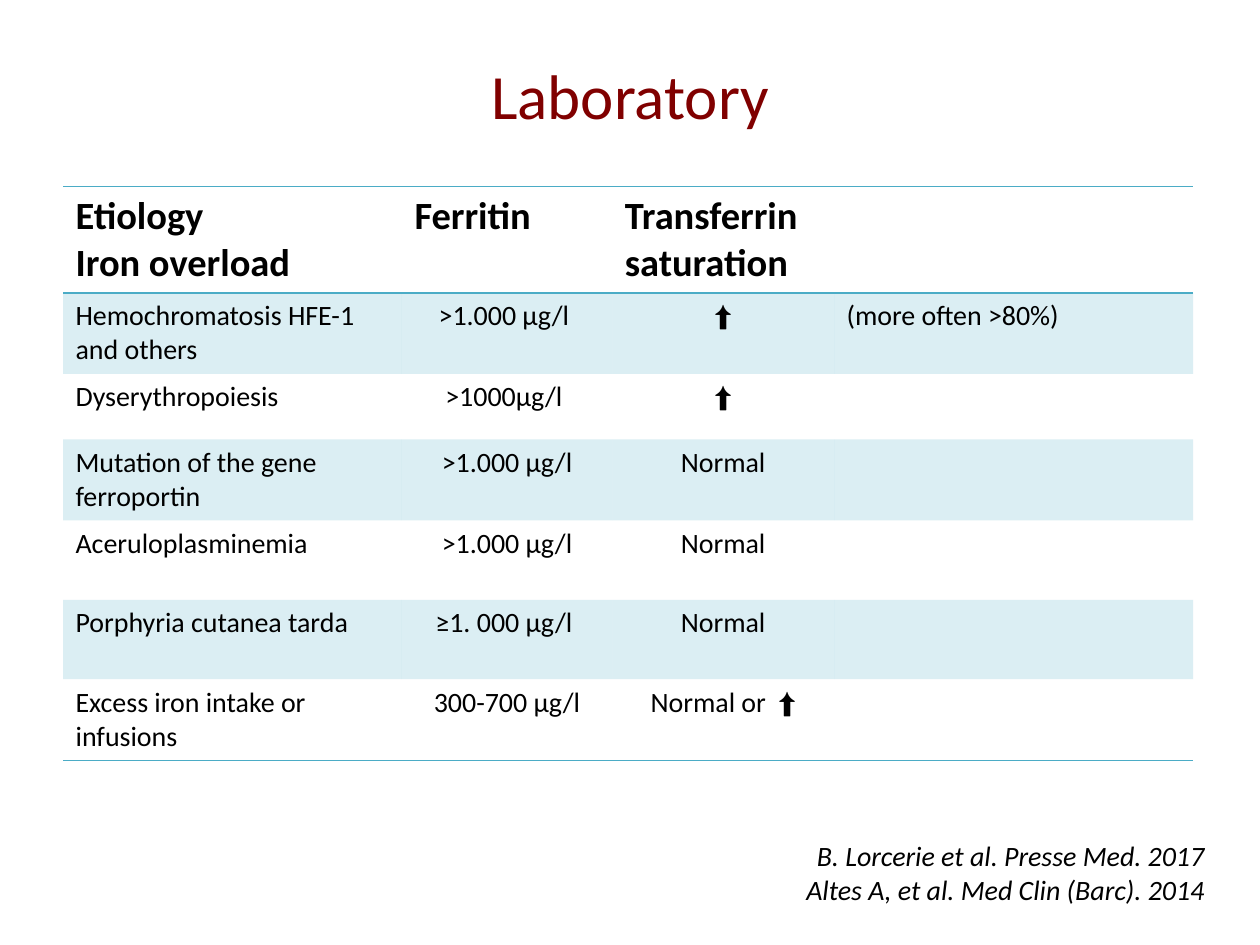
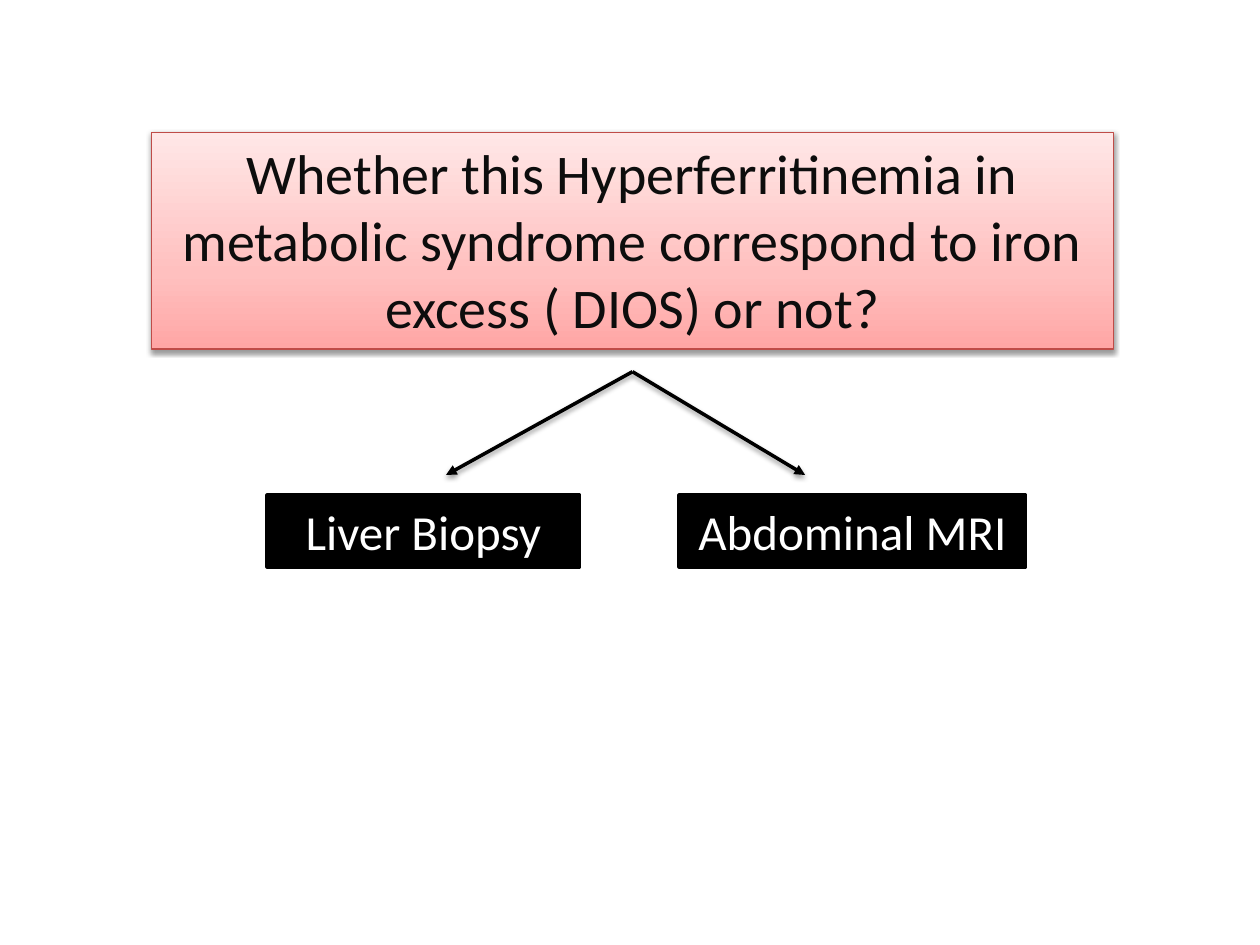
from copy import deepcopy
from dataclasses import dataclass

from lxml.etree import SubElement
from pptx import Presentation
from pptx.dml.color import RGBColor
from pptx.enum.shapes import MSO_CONNECTOR, MSO_SHAPE
from pptx.enum.text import MSO_ANCHOR, PP_ALIGN
from pptx.oxml import parse_xml
from pptx.oxml.ns import nsdecls, qn
from pptx.presentation import Presentation as Deck
from pptx.shapes.autoshape import Shape
from pptx.slide import Slide
from pptx.text.text import TextFrame
from pptx.util import Inches, Pt


@dataclass(frozen=True)
class Theme:
    font: str = "Calibri"
    black: str = "000000"
    white: str = "FFFFFF"
    title: str = "800000"
    accent: str = "4BACC6"
    question_text: str = "0D0D0D"
    question_line: str = "BF4C48"
    question_stops: tuple[tuple[float, str], ...] = ((0, "FFA6A5"), (0.35, "FFC0BF"), (1, "FFE7E7"))
    title_size: int = 36
    question_size: int = 32
    box_size: int = 28
    header_size: int = 22
    body_size: int = 16


@dataclass(frozen=True)
class Area:
    left: float
    top: float
    width: float
    height: float

    def lengths(self) -> tuple[int, int, int, int]:
        return Inches(self.left), Inches(self.top), Inches(self.width), Inches(self.height)


@dataclass(frozen=True)
class TextStyle:
    size: int
    color: str
    align: PP_ALIGN = PP_ALIGN.LEFT
    bold: bool = False
    italic: bool = False


@dataclass(frozen=True)
class ExamBox:
    text: str
    area: Area
    arrow_end: float


THEME = Theme()
NO_TABLE_STYLE = "{2D5ABB26-0587-4C30-8999-92F81FD0307C}"
COLUMN_WIDTHS = (2.69, 1.67, 1.76, 2.85)
ROW_HEIGHTS = (0.83, 0.63, 0.52, 0.63, 0.63, 0.63, 0.63)
LAB_ROWS = (
    ("Etiology\nIron overload", "Ferritin", "Transferrin saturation", ""),
    ("Hemochromatosis HFE-1 and others", ">1.000 μg/l ", "⬆", "(more often >80%)"),
    ("Dyserythropoiesis", ">1000μg/l ", "⬆", ""),
    ("Mutation of the gene ferroportin", ">1.000 μg/l", "Normal", ""),
    ("Aceruloplasminemia", ">1.000 μg/l", "Normal", ""),
    ("Porphyria cutanea tarda", "≥1. 000 μg/l ", "Normal", ""),
    ("Excess iron intake or infusions", " 300-700 μg/l ", "Normal or  ⬆", ""),
)
QUESTION = Area(1.2, 1.05, 7.64, 1.72)
EXAMS = (
    ExamBox("Liver Biopsy", Area(2.12, 3.93, 2.48, 0.57), 3.54),
    ExamBox("Abdominal MRI", Area(5.39, 3.93, 2.75, 0.57), 6.39),
)
ARROW_TOP, ARROW_BOTTOM = 2.95, 3.77


def rgb(color: str) -> RGBColor:
    return RGBColor.from_string(color)


def write(tf: TextFrame, text: str, style: TextStyle) -> None:
    tf.text = text
    for p in tf.paragraphs:
        p.alignment = style.align
        p.font.size = Pt(style.size)
        for r in p.runs:
            r.font.name = THEME.font
            r.font.size = Pt(style.size)
            r.font.bold = style.bold
            r.font.italic = style.italic
            r.font.color.rgb = rgb(style.color)


def add_label(s: Slide, area: Area, text: str, style: TextStyle) -> None:
    tf = s.shapes.add_textbox(*area.lengths()).text_frame
    tf.word_wrap = False
    write(tf, text, style)


def add_box(s: Slide, area: Area, text: str, style: TextStyle, line: str, line_width: float) -> Shape:
    sp = s.shapes.add_shape(MSO_SHAPE.RECTANGLE, *area.lengths())
    sp.shadow.inherit = False
    sp.fill.solid()
    sp.fill.fore_color.rgb = rgb(THEME.black)
    sp.line.color.rgb = rgb(line)
    sp.line.width = Pt(line_width)
    tf = sp.text_frame
    tf.word_wrap = True
    tf.vertical_anchor = MSO_ANCHOR.TOP
    write(tf, text, style)
    return sp


def add_shadow(effects) -> None:
    effects.append(parse_xml(
        f'<a:outerShdw {nsdecls("a")} blurRad="{Pt(3.1)}" dist="{Pt(1.6)}" dir="5400000" rotWithShape="0">'
        f'<a:srgbClr val="{THEME.black}"><a:alpha val="38000"/></a:srgbClr></a:outerShdw>'
    ))


def add_gradient(sp: Shape) -> None:
    sp.fill.gradient()
    sp.fill.gradient_angle = 90
    stop_list = sp._element.find(".//" + qn("a:gsLst"))
    stop_list.append(deepcopy(stop_list[-1]))
    for stop, (position, color) in zip(sp.fill.gradient_stops, THEME.question_stops):
        stop.position = position
        stop.color.rgb = rgb(color)


def add_arrow(s: Slide, start: tuple[float, float], end: tuple[float, float]) -> None:
    points = [Inches(v) for v in (*start, *end)]
    arrow = s.shapes.add_connector(MSO_CONNECTOR.STRAIGHT, *points)
    arrow.line.color.rgb = rgb(THEME.black)
    arrow.line.width = Pt(2)
    sp_pr = arrow._element.spPr
    SubElement(sp_pr.find(qn("a:ln")), qn("a:tailEnd"), type="triangle")
    add_shadow(SubElement(sp_pr, qn("a:effectLst")))


def style_cell(cell, row: int) -> None:
    tc_pr = cell._tc.get_or_add_tcPr()
    if row % 2:
        cell.fill.solid()
        cell.fill.fore_color.rgb = rgb(THEME.accent)
        SubElement(tc_pr.find(".//" + qn("a:srgbClr")), qn("a:alpha"), val="20000")
    else:
        cell.fill.background()
    edges = {0: ("lnT", "lnB"), len(LAB_ROWS) - 1: ("lnB",)}.get(row, ())
    for i, edge in enumerate(edges):
        tc_pr.insert(i, parse_xml(
            f'<a:{edge} {nsdecls("a")} w="{Pt(1)}"><a:solidFill>'
            f'<a:srgbClr val="{THEME.accent}"/></a:solidFill></a:{edge}>'
        ))


def add_lab_table(s: Slide) -> None:
    area = Area(0.5, 1.48, sum(COLUMN_WIDTHS), sum(ROW_HEIGHTS))
    table = s.shapes.add_table(len(LAB_ROWS), len(COLUMN_WIDTHS), *area.lengths()).table
    table.first_row = table.horz_banding = False
    table._tbl.tblPr.find(qn("a:tableStyleId")).text = NO_TABLE_STYLE
    for column, width in zip(table.columns, COLUMN_WIDTHS):
        column.width = Inches(width)
    for i, (row, height) in enumerate(zip(table.rows, ROW_HEIGHTS)):
        row.height = Inches(height)
        for j, (cell, text) in enumerate(zip(row.cells, LAB_ROWS[i])):
            align = PP_ALIGN.CENTER if i and j in (1, 2) else PP_ALIGN.LEFT
            size = THEME.body_size if i else THEME.header_size
            write(cell.text_frame, text, TextStyle(size, THEME.black, align, bold=i == 0))
            style_cell(cell, i)


def build_laboratory(prs: Deck) -> None:
    s = prs.slides.add_slide(prs.slide_layouts[6])
    add_lab_table(s)
    add_label(s, Area(6.26, 6.61, 3.4, 0.64),
              "B. Lorcerie et al. Presse Med. 2017\nAltes A, et al. Med Clin (Barc). 2014",
              TextStyle(THEME.body_size, THEME.black, PP_ALIGN.RIGHT, italic=True))
    add_label(s, Area(3.8, 0.4, 2.45, 0.71), "Laboratory", TextStyle(THEME.title_size, THEME.title))


def build_question(prs: Deck) -> None:
    s = prs.slides.add_slide(prs.slide_layouts[6])
    sp = add_box(s, QUESTION,
                 "Whether this Hyperferritinemia in metabolic syndrome correspond to iron excess ( DIOS) or not?",
                 TextStyle(THEME.question_size, THEME.question_text, PP_ALIGN.CENTER),
                 THEME.question_line, 0.75)
    add_gradient(sp)
    add_shadow(sp._element.spPr.find(qn("a:effectLst")))
    center = QUESTION.left + QUESTION.width / 2
    exam_style = TextStyle(THEME.box_size, THEME.white, PP_ALIGN.CENTER)
    for exam in EXAMS:
        add_arrow(s, (center, ARROW_TOP), (exam.arrow_end, ARROW_BOTTOM))
        add_box(s, exam.area, exam.text, exam_style, THEME.black, 2)


def main() -> None:
    prs = Presentation()
    prs.slide_width, prs.slide_height = Inches(10), Inches(7.5)
    build_laboratory(prs)
    build_question(prs)
    prs.save("out.pptx")


if __name__ == "__main__":
    main()
